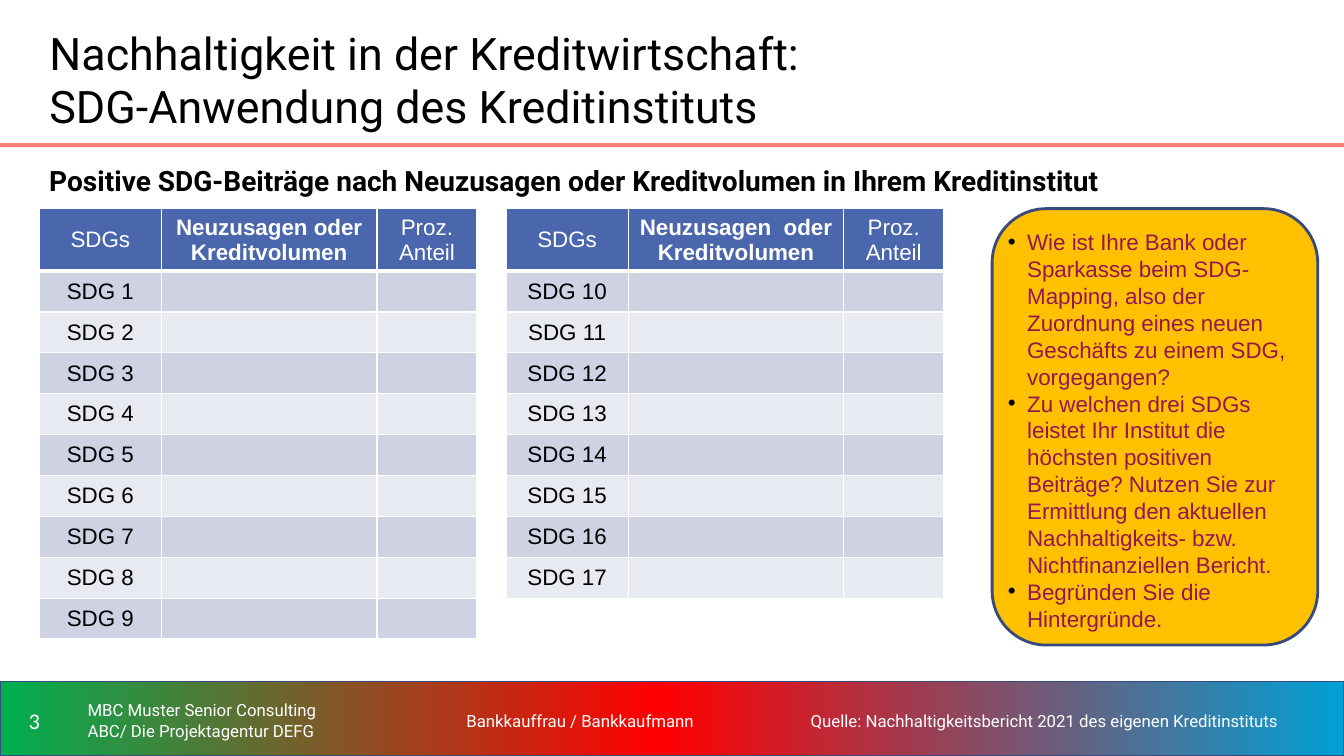
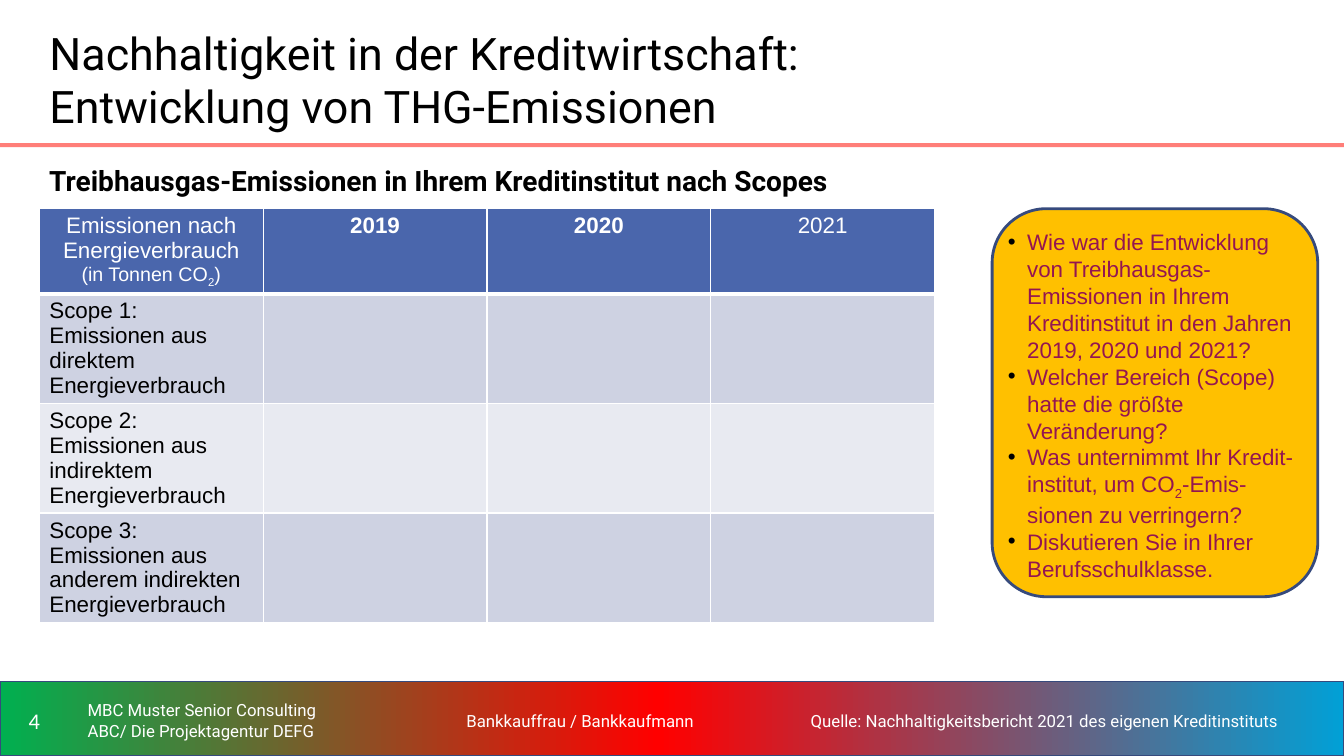
"""Build two worksheet slides on sustainability in the credit sector."""
from copy import deepcopy
from dataclasses import dataclass

from lxml import etree
from pptx import Presentation
from pptx.dml.color import RGBColor
from pptx.enum.shapes import MSO_SHAPE
from pptx.enum.text import MSO_ANCHOR, MSO_AUTO_SIZE, PP_ALIGN
from pptx.oxml.ns import qn
from pptx.util import Inches, Pt

RECT, ROUNDED = MSO_SHAPE.RECTANGLE, MSO_SHAPE.ROUNDED_RECTANGLE
TOP, MIDDLE = MSO_ANCHOR.TOP, MSO_ANCHOR.MIDDLE
LEFT, CENTER = PP_ALIGN.LEFT, PP_ALIGN.CENTER
NO_FIT = MSO_AUTO_SIZE.NONE

BLACK, WHITE = "000000", "FFFFFF"
NAVY, CORAL, AMBER, PLUM = "364A7D", "FF7E79", "FFC000", "941651"
HEADER_FILL, ROW_FILLS = "4A66AC", ("CED2E2", "E8EAF1")
BAND_STOPS = ((0, "00B050"), (0.49, "FF0000"), (1, "01A0D6"))
MARGIN, CONTENT_TOP = 0.39, 2.07
FOOTER_TOP, FOOTER_HEIGHT = 6.84, 0.61
INDENT = 0.19


@dataclass(frozen=True)
class Style:
    """Look of a paragraph."""

    size: float
    font: str
    color: str
    bold: bool = False
    align: PP_ALIGN = LEFT
    spacing: float = 1.0


@dataclass(frozen=True)
class Grid:
    """A worksheet table with empty answer cells."""

    left: float
    widths: tuple[float, ...]
    headers: tuple[str, ...]
    labels: tuple[str, ...]
    header_height: float
    body_height: float
    anchor: MSO_ANCHOR
    label_align: PP_ALIGN


@dataclass(frozen=True)
class Worksheet:
    """Content of one slide."""

    number: int
    topic: str
    heading: str
    grids: tuple[Grid, ...]
    questions: tuple[str, ...]
    callout_height: float


TITLE = Style(32, "Roboto", BLACK)
HEADING = Style(20, "Roboto", BLACK, bold=True)
NUMBER = Style(16, "Calibri", WHITE, align=CENTER)
AUTHOR = Style(12, "Roboto", WHITE)
SOURCE = Style(12, "Roboto", WHITE, spacing=1.1)
COURSE = Style(12, "Roboto", WHITE, align=CENTER, spacing=1.1)
QUESTION = Style(16, "Arial", PLUM)


def rgb(color: str) -> RGBColor:
    """Turn a hex string into a colour."""
    return RGBColor.from_string(color)


def style_paragraph(p, style: Style) -> None:
    """Apply a style to a whole paragraph."""
    p.alignment = style.align
    p.line_spacing = style.spacing
    p.space_before = p.space_after = Pt(0)
    p.font.size, p.font.name, p.font.bold = Pt(style.size), style.font, style.bold
    p.font.color.rgb = rgb(style.color)


def write_paragraph(p, text: str) -> None:
    """Write text with line breaks, setting ₂ as a subscript run."""
    for i, line in enumerate(text.split("\n")):
        if i:
            p.add_line_break()
        for j, part in enumerate(line.split("₂")):
            if j:
                r = p.add_run()
                r.text = "2"
                r.font._element.set("baseline", "-25000")
            if part:
                p.add_run().text = part


def write_frame(tf, text: str, style: Style, anchor: MSO_ANCHOR = TOP) -> None:
    """Fill a text frame with one styled paragraph."""
    tf.word_wrap, tf.auto_size, tf.vertical_anchor = True, NO_FIT, anchor
    tf.margin_left = tf.margin_right = Inches(0.1)
    tf.margin_top = tf.margin_bottom = Inches(0.05)
    p = tf.paragraphs[0]
    write_paragraph(p, text)
    style_paragraph(p, style)


def place(sp, left: float, top: float, width: float, height: float) -> None:
    """Move and size a shape, in inches."""
    sp.left, sp.top = Inches(left), Inches(top)
    sp.width, sp.height = Inches(width), Inches(height)


def add_box(s, left: float, top: float, width: float, height: float):
    """Add a text box and return its text frame."""
    return s.shapes.add_textbox(*map(Inches, (left, top, width, height))).text_frame


def add_block(s, kind: MSO_SHAPE, left: float, top: float, width: float, height: float,
              fill: str | None = None, line: str | None = None, weight: float = 1):
    """Add a preset shape without shadow."""
    sp = s.shapes.add_shape(kind, *map(Inches, (left, top, width, height)))
    sp.shadow.inherit = False
    if fill:
        sp.fill.solid()
        sp.fill.fore_color.rgb = rgb(fill)
    if line:
        sp.line.color.rgb, sp.line.width = rgb(line), Pt(weight)
    else:
        sp.line.fill.background()
    return sp


def decorate_layout(s) -> None:
    """Draw the footer band and title rule and move them to the layout."""
    band = add_block(s, RECT, 0, 6.76, 13.33, 0.74, line=NAVY)
    band.fill.gradient()
    band.fill.gradient_angle = 0
    stops = band.element.find(".//" + qn("a:gsLst"))
    stops.insert(1, deepcopy(stops[0]))
    for stop, (position, color) in zip(band.fill.gradient_stops, BAND_STOPS):
        stop.position, stop.color.rgb = position, rgb(color)
    rule = add_block(s, RECT, 0, 1.42, 13.33, 0.04, fill=CORAL)
    tree = s.slide_layout.shapes.element
    for i, sp in enumerate((band, rule)):
        tree.insert(2 + i, sp.element)


def set_borders(cell, top: float, bottom: float) -> None:
    """Give a cell white borders, with widths in points."""
    tc_pr = cell._tc.get_or_add_tcPr()
    for side, width in (("L", 1), ("R", 1), ("T", top), ("B", bottom)):
        ln = etree.SubElement(tc_pr, qn(f"a:ln{side}"), w=str(Pt(width)))
        fill = etree.SubElement(ln, qn("a:solidFill"))
        etree.SubElement(fill, qn("a:srgbClr"), val=WHITE)


def write_cell(cell, text: str, style: Style, anchor: MSO_ANCHOR) -> None:
    """Write cell lines as paragraphs, with a bracketed line set smaller."""
    cell.vertical_anchor = anchor
    tf = cell.text_frame
    for i, line in enumerate(text.split("\n")):
        p = tf.add_paragraph() if i else tf.paragraphs[0]
        write_paragraph(p, line)
        style_paragraph(p, style)
        if line.startswith("("):
            p.font.size = Pt(14)


def add_grid(s, grid: Grid) -> None:
    """Add a table with a header row and striped body rows."""
    n_rows, n_cols = len(grid.labels) + 1, len(grid.widths)
    table = s.shapes.add_table(
        n_rows, n_cols, Inches(grid.left), Inches(CONTENT_TOP), Inches(sum(grid.widths)),
        Inches(grid.header_height + grid.body_height)).table
    for column, width in zip(table.columns, grid.widths):
        column.width = Inches(width)
    for i, row in enumerate(table.rows):
        row.height = Inches(grid.body_height / len(grid.labels) if i else grid.header_height)
        for j, cell in enumerate(row.cells):
            set_borders(cell, 3 if i == 1 else 1, 1 if i else 3)
            cell.fill.solid()
            cell.fill.fore_color.rgb = rgb(ROW_FILLS[(i - 1) % 2] if i else HEADER_FILL)
            if i == 0:
                inner = 0 < j < n_cols - 1
                style = Style(16, "Arial", WHITE, inner, CENTER)
                write_cell(cell, grid.headers[j], style, grid.anchor)
            elif j == 0:
                style = Style(16, "Arial", BLACK, align=grid.label_align)
                write_cell(cell, grid.labels[i - 1], style, grid.anchor)


def add_callout(s, questions: tuple[str, ...], height: float) -> None:
    """Add the rounded box with bulleted questions."""
    sp = add_block(s, ROUNDED, 9.84, CONTENT_TOP, 3.23, height, AMBER, NAVY, 2)
    tf = sp.text_frame
    tf.word_wrap, tf.vertical_anchor = True, TOP
    tf.margin_left = tf.margin_right = tf.margin_bottom = 0
    tf.margin_top = Inches(0.04)
    for i, question in enumerate(questions):
        p = tf.add_paragraph() if i else tf.paragraphs[0]
        p_pr = p._p.get_or_add_pPr()
        p_pr.set("marL", str(Inches(INDENT)))
        p_pr.set("indent", str(-Inches(INDENT)))
        color = etree.SubElement(p_pr, qn("a:buClr"))
        etree.SubElement(color, qn("a:srgbClr"), val=BLACK)
        etree.SubElement(p_pr, qn("a:buFont"), typeface="Arial")
        etree.SubElement(p_pr, qn("a:buChar"), char="•")
        write_paragraph(p, question)
        style_paragraph(p, QUESTION)


def add_footer(s, number: int) -> None:
    """Write the page number, authors, course and source on the band."""
    write_frame(add_box(s, 0, FOOTER_TOP, 0.68, FOOTER_HEIGHT), str(number), NUMBER, MIDDLE)
    write_frame(add_box(s, 0.77, FOOTER_TOP, 2.78, FOOTER_HEIGHT),
                "MBC Muster Senior Consulting\nABC/ Die Projektagentur DEFG", AUTHOR, MIDDLE)
    course, unused_left, source, unused_right = list(s.placeholders)[1:]
    for sp in (unused_left, unused_right):
        sp.element.getparent().remove(sp.element)
    for sp, left, width, text, style in (
            (course, 3.66, 4.19, "Bankkauffrau / Bankkaufmann", COURSE),
            (source, 7.94, 5.05,
             "Quelle: Nachhaltigkeitsbericht 2021 des eigenen Kreditinstituts", SOURCE)):
        place(sp, left, FOOTER_TOP, width, FOOTER_HEIGHT)
        write_frame(sp.text_frame, text, style, MIDDLE)


def add_worksheet(prs, layout, sheet: Worksheet):
    """Add one complete slide."""
    s = prs.slides.add_slide(layout)
    place(s.shapes.title, MARGIN, 0.2, 12.6, 1.18)
    write_frame(s.shapes.title.text_frame,
                f"Nachhaltigkeit in der Kreditwirtschaft:\n{sheet.topic}", TITLE)
    write_frame(add_box(s, MARGIN, 1.57, 12.6, 0.44), sheet.heading, HEADING)
    for grid in sheet.grids:
        add_grid(s, grid)
    add_callout(s, sheet.questions, sheet.callout_height)
    add_footer(s, sheet.number)
    return s


def sdg_grid(left: float, first: int, last: int, header: str, body_height: float) -> Grid:
    """Describe a table for a range of SDGs."""
    return Grid(left, (1.21, 2.14, 0.99), ("SDGs", header, "Proz. Anteil"),
                tuple(f"SDG {n}" for n in range(first, last + 1)),
                0.62, body_height, MIDDLE, CENTER)


SCOPES = ("direktem", "indirektem", "anderem indirekten")
SHEETS = (
    Worksheet(
        3, "SDG-Anwendung des Kreditinstituts",
        "Positive SDG-Beiträge nach Neuzusagen oder Kreditvolumen in Ihrem Kreditinstitut",
        (sdg_grid(MARGIN, 1, 9, "Neuzusagen oder Kreditvolumen", 3.64),
         sdg_grid(5.02, 10, 17, "Neuzusagen  oder Kreditvolumen", 3.24)),
        ("Wie ist Ihre Bank oder Sparkasse beim SDG-\nMapping, also der Zuordnung eines neuen "
         "Geschäfts zu einem SDG, vorgegangen?",
         "Zu welchen drei SDGs leistet Ihr Institut die höchsten positiven Beiträge? Nutzen Sie "
         "zur Ermittlung den aktuellen Nachhaltigkeits- bzw. Nichtfinanziellen Bericht.",
         "Begründen Sie die Hintergründe."), 4.33),
    Worksheet(
        4, "Entwicklung von THG-Emissionen",
        "Treibhausgas-Emissionen in Ihrem Kreditinstitut nach Scopes",
        (Grid(MARGIN, (2.22,) * 4,
              ("Emissionen nach Energieverbrauch\n(in Tonnen CO₂)", "2019", "2020", "2021"),
              tuple(f"Scope {n}:\nEmissionen aus {kind} Energieverbrauch"
                    for n, kind in enumerate(SCOPES, 1)),
              0.83, 3.26, TOP, LEFT),),
        ("Wie war die Entwicklung von Treibhausgas-Emissionen in Ihrem Kreditinstitut in den "
         "Jahren 2019, 2020 und 2021?",
         "Welcher Bereich (Scope) hatte die größte Veränderung?",
         "Was unternimmt Ihr Kredit-\ninstitut, um CO₂-Emis-\nsionen zu verringern?",
         "Diskutieren Sie in Ihrer Berufsschulklasse."), 3.85),
)


def main() -> None:
    """Build and save the presentation."""
    prs = Presentation()
    prs.slide_width, prs.slide_height = Inches(13.33), Inches(7.5)
    layout = prs.slide_layouts.get_by_name("Comparison")
    slides = [add_worksheet(prs, layout, sheet) for sheet in SHEETS]
    decorate_layout(slides[0])
    prs.save("out.pptx")


if __name__ == "__main__":
    main()
